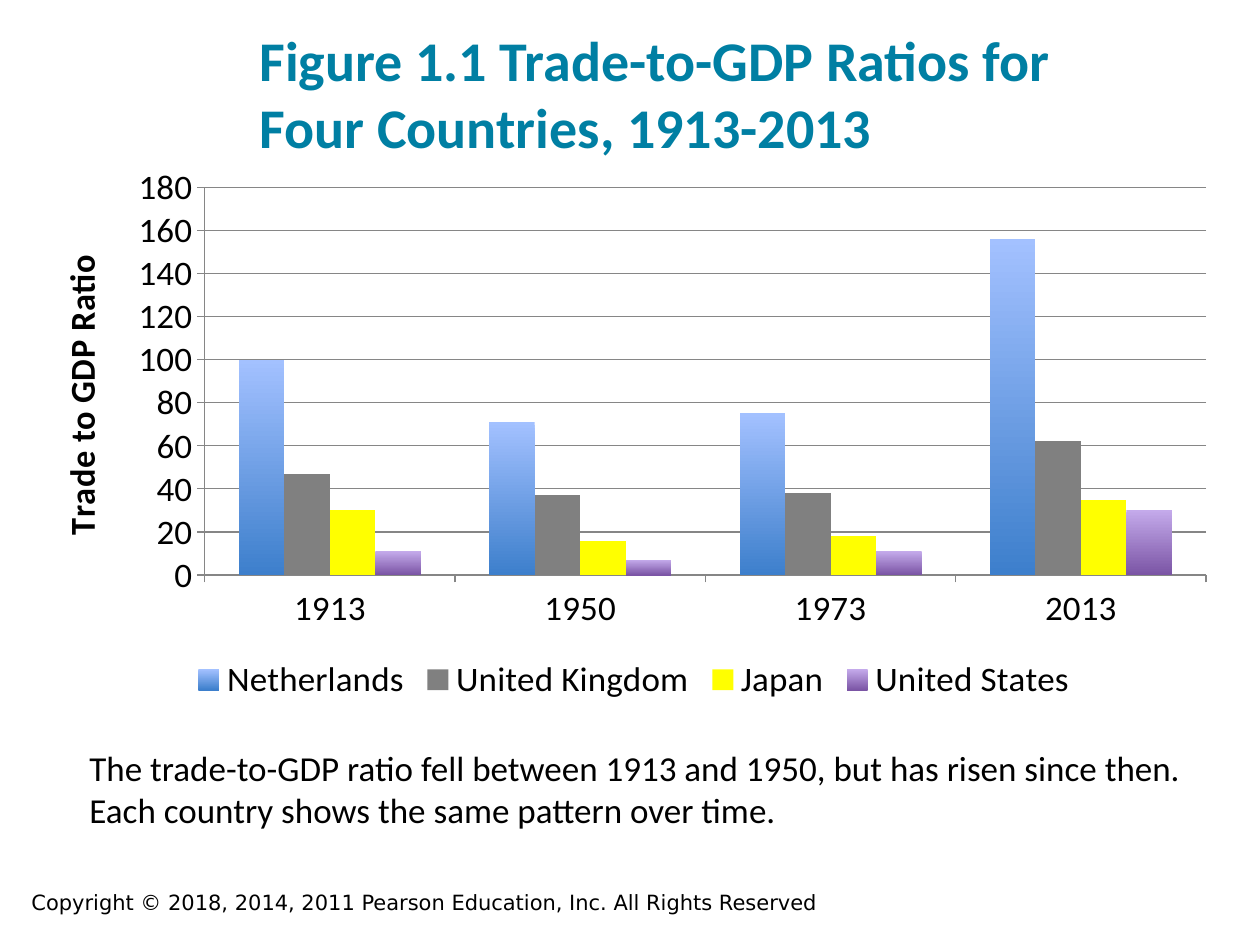
import pptx
import pptx.util
import pptx.chart.data
import pptx.dml.color
import pptx.enum.chart
import pptx.enum.text
import pptx.oxml
import pptx.oxml.ns

PX = 914400 // 126
COLORS = {
    "black": "000000",
    "teal": "007FA3",
    "grid": "868686",
    "gray": "808080",
    "yellow": "FFFF00",
    "blue_top": "A3C1FF",
    "blue_bottom": "3D7FCC",
    "purple_top": "C4AAEB",
    "purple_bottom": "7B55A5",
}


def rgb(name):
    return pptx.dml.color.RGBColor.from_string(COLORS[name])


def add_text(text, box, size, font="Calibri", color="black", bold=False,
             anchor=pptx.enum.text.MSO_ANCHOR.TOP):
    frame = slide.shapes.add_textbox(*[v * PX for v in box]).text_frame
    frame.word_wrap = True
    frame.vertical_anchor = anchor
    paragraph = frame.paragraphs[0]
    paragraph.text = text
    paragraph.font.size = pptx.util.Pt(size)
    paragraph.font.name = font
    paragraph.font.bold = bold
    paragraph.font.color.rgb = rgb(color)


deck = pptx.Presentation()
deck.slide_width = pptx.util.Inches(10)
deck.slide_height = pptx.util.Inches(7.5)
slide = deck.slides.add_slide(deck.slide_layouts[6])

add_text("Copyright © 2018, 2014, 2011 Pearson Education, Inc. All Rights Reserved",
         (19, 883, 840, 45), 12, font="DejaVu Sans")
add_text("Figure 1.1 Trade-to-GDP Ratios for Four Countries, 1913-2013",
         (247, 6, 902, 160), 32, color="teal", bold=True,
         anchor=pptx.enum.text.MSO_ANCHOR.BOTTOM)

ratios = pptx.chart.data.CategoryChartData()
ratios.categories = ["1913", "1950", "1973", "2013"]
countries = [
    ("Netherlands", (100, 71, 75, 156), ("blue_top", "blue_bottom")),
    ("United Kingdom", (47, 37, 38, 62), ("gray",)),
    ("Japan", (30, 16, 18, 35), ("yellow",)),
    ("United States", (11, 7, 11, 30), ("purple_top", "purple_bottom")),
]
for country, values, _ in countries:
    ratios.add_series(country, values)

chart = slide.shapes.add_chart(
    pptx.enum.chart.XL_CHART_TYPE.COLUMN_CLUSTERED,
    38 * PX, 166 * PX, 1192 * PX, 542 * PX, ratios).chart
chart.has_title = False
chart.font.name = "Calibri"
chart.font.size = pptx.util.Pt(20)
chart.font.color.rgb = rgb("black")
chart.has_legend = True
chart.legend.position = pptx.enum.chart.XL_LEGEND_POSITION.BOTTOM
chart.legend.include_in_layout = False

columns = chart.plots[0]
columns.gap_width = 150
columns.overlap = 0
columns.vary_by_categories = False
for series, (_, _, shades) in zip(columns.series, countries):
    fill = series.format.fill
    if len(shades) == 1:
        fill.solid()
        fill.fore_color.rgb = rgb(shades[0])
    else:
        fill.gradient()
        fill.gradient_angle = 270
        for stop, shade in zip(fill.gradient_stops, shades):
            stop.color.rgb = rgb(shade)

ratio_axis = chart.value_axis
ratio_axis.minimum_scale = 0
ratio_axis.maximum_scale = 180
ratio_axis.major_unit = 20
ratio_axis.has_major_gridlines = True
for part in (ratio_axis, chart.category_axis, ratio_axis.major_gridlines):
    part.format.line.color.rgb = rgb("grid")
    part.format.line.width = pptx.util.Pt(0.75)
for axis in (ratio_axis, chart.category_axis):
    axis.major_tick_mark = pptx.enum.chart.XL_TICK_MARK.OUTSIDE
    axis.tick_labels.font.size = pptx.util.Pt(20)

axis_title = ratio_axis.axis_title.text_frame
axis_title.text = "Trade to GDP Ratio"
title_font = axis_title.paragraphs[0].runs[0].font
title_font.size = pptx.util.Pt(20)
title_font.bold = True
title_font.name = "Calibri"
title_font.color.rgb = rgb("black")
axis_title._txBody.find(pptx.oxml.ns.qn("a:bodyPr")).set("rot", "-5400000")

plot_area = chart._chartSpace.chart.plotArea
for old_layout in plot_area.findall(pptx.oxml.ns.qn("c:layout")):
    plot_area.remove(old_layout)
plot_area.insert(0, pptx.oxml.parse_xml(
    f'<c:layout {pptx.oxml.ns.nsdecls("c")}><c:manualLayout>'
    '<c:layoutTarget val="inner"/><c:xMode val="edge"/><c:yMode val="edge"/>'
    '<c:x val="0.14"/><c:y val="0.02"/><c:w val="0.84"/><c:h val="0.73"/>'
    '</c:manualLayout></c:layout>'))

add_text("The trade-to-GDP ratio fell between 1913 and 1950, but has risen since then. "
         "Each country shows the same pattern over time.", (77, 740, 1154, 111), 20)

deck.save("out.pptx")
